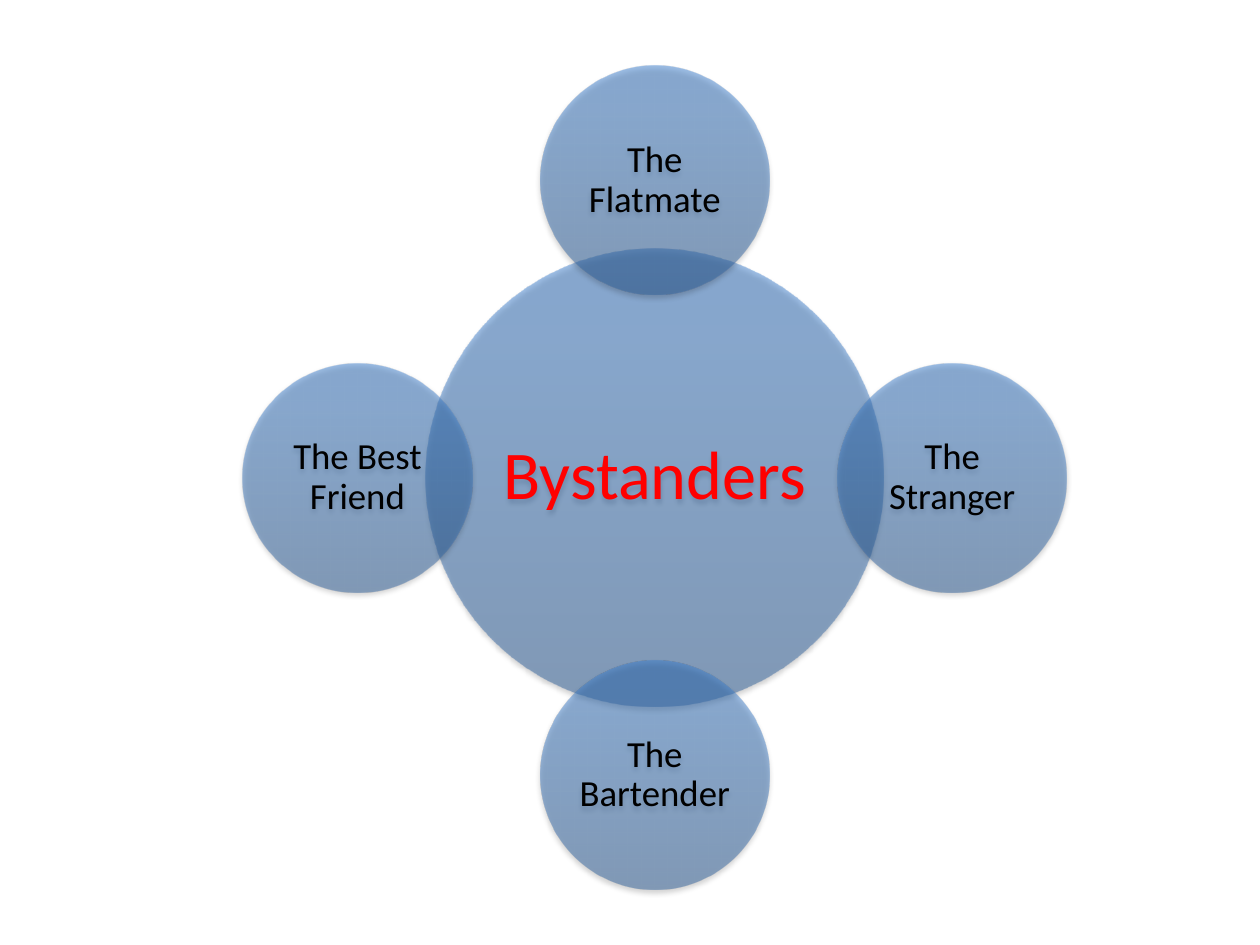
from math import cos, radians, sin

from pptx import Presentation
from pptx.dml.color import RGBColor
from pptx.enum.shapes import MSO_SHAPE
from pptx.enum.text import MSO_ANCHOR, PP_ALIGN
from pptx.oxml import parse_xml
from pptx.oxml.ns import nsdecls
from pptx.util import Cm, Pt

COLORS = {
    "deep": "2F5F99",
    "mid": "3D7CC7",
    "bright": "3A7CCB",
    "shadow": "000000",
    "hub_text": "FF0000",
    "satellite_text": "000000",
}
GRADIENT = [(0, "deep"), (80, "mid"), (100, "bright")]
HUB = {"size": Pt(39), "color": "hub_text", "inset": Cm(0.13)}
SATELLITE = {"size": Pt(21), "color": "satellite_text", "inset": Cm(0.07)}
SATELLITE_LABELS = ["The Flatmate", "The Stranger", "The Bartender", "The Best Friend"]


def gradient_fill():
    """Half-transparent vertical gradient, darkest at the bottom."""
    stops = "".join(
        f'<a:gs pos="{position * 1000}"><a:srgbClr val="{COLORS[name]}">'
        '<a:alpha val="50000"/></a:srgbClr></a:gs>'
        for position, name in GRADIENT
    )
    return parse_xml(
        f'<a:gradFill {nsdecls("a")} rotWithShape="1"><a:gsLst>{stops}</a:gsLst>'
        '<a:lin ang="16200000" scaled="0"/></a:gradFill>'
    )


def soft_shadow():
    return parse_xml(
        f'<a:effectLst {nsdecls("a")}><a:outerShdw blurRad="{Pt(3.15)}" '
        f'dist="{Pt(1.8)}" dir="5400000" rotWithShape="0">'
        f'<a:srgbClr val="{COLORS["shadow"]}"><a:alpha val="35000"/></a:srgbClr>'
        "</a:outerShdw></a:effectLst>"
    )


def add_circle(slide, center_x, center_y, diameter, label, style):
    circle = slide.shapes.add_shape(
        MSO_SHAPE.OVAL,
        Cm(center_x - diameter / 2), Cm(center_y - diameter / 2),
        Cm(diameter), Cm(diameter),
    )
    properties = circle.element.spPr
    properties.append(gradient_fill())
    circle.line.fill.background()
    properties.append(soft_shadow())

    frame = circle.text_frame
    frame.word_wrap = True
    frame.vertical_anchor = MSO_ANCHOR.MIDDLE
    for side in ("left", "top", "right", "bottom"):
        setattr(frame, f"margin_{side}", style["inset"])
    paragraph = frame.paragraphs[0]
    paragraph.alignment = PP_ALIGN.CENTER
    paragraph.line_spacing = 0.9
    run = paragraph.add_run()
    run.text = label
    for attribute, value in {"name": "Calibri", "size": style["size"]}.items():
        setattr(run.font, attribute, value)
    run.font.color.rgb = RGBColor.from_string(COLORS[style["color"]])


def add_radial_diagram(slide, left, top, side, hub_label, satellite_labels):
    """Hub with satellites spaced clockwise from the top of a square box (cm)."""
    satellite = side / 3.6
    orbit = (side - satellite) / 2
    center_x, center_y = left + side / 2, top + side / 2
    add_circle(slide, center_x, center_y, satellite * 2, hub_label, HUB)
    for index, label in enumerate(satellite_labels):
        angle = radians(360 * index / len(satellite_labels) - 90)
        add_circle(
            slide,
            center_x + orbit * cos(angle), center_y + orbit * sin(angle),
            satellite, label, SATELLITE,
        )


def main():
    presentation = Presentation()
    presentation.slide_width, presentation.slide_height = Cm(25.4), Cm(19.05)
    slide = presentation.slides.add_slide(presentation.slide_layouts[6])
    add_radial_diagram(slide, 4.9, 1.33, 16.6, "Bystanders", SATELLITE_LABELS)
    presentation.save("out.pptx")


if __name__ == "__main__":
    main()
